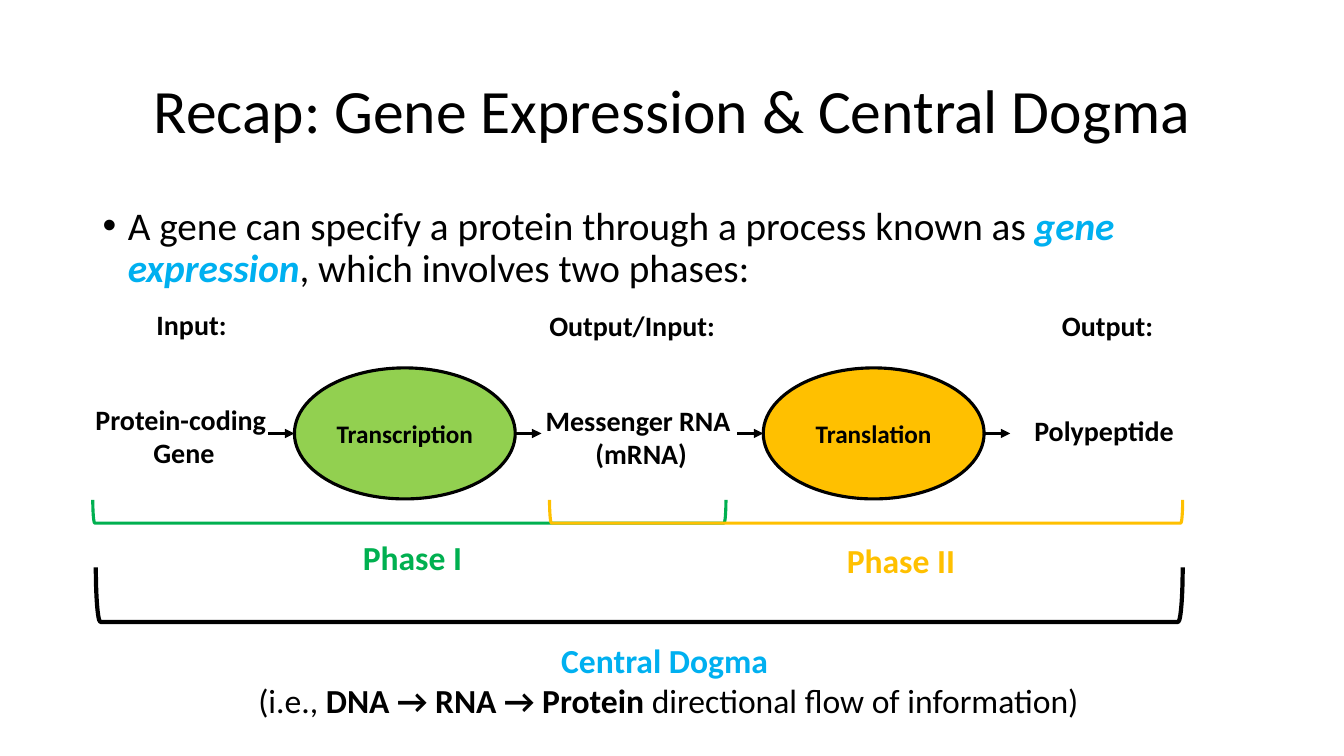
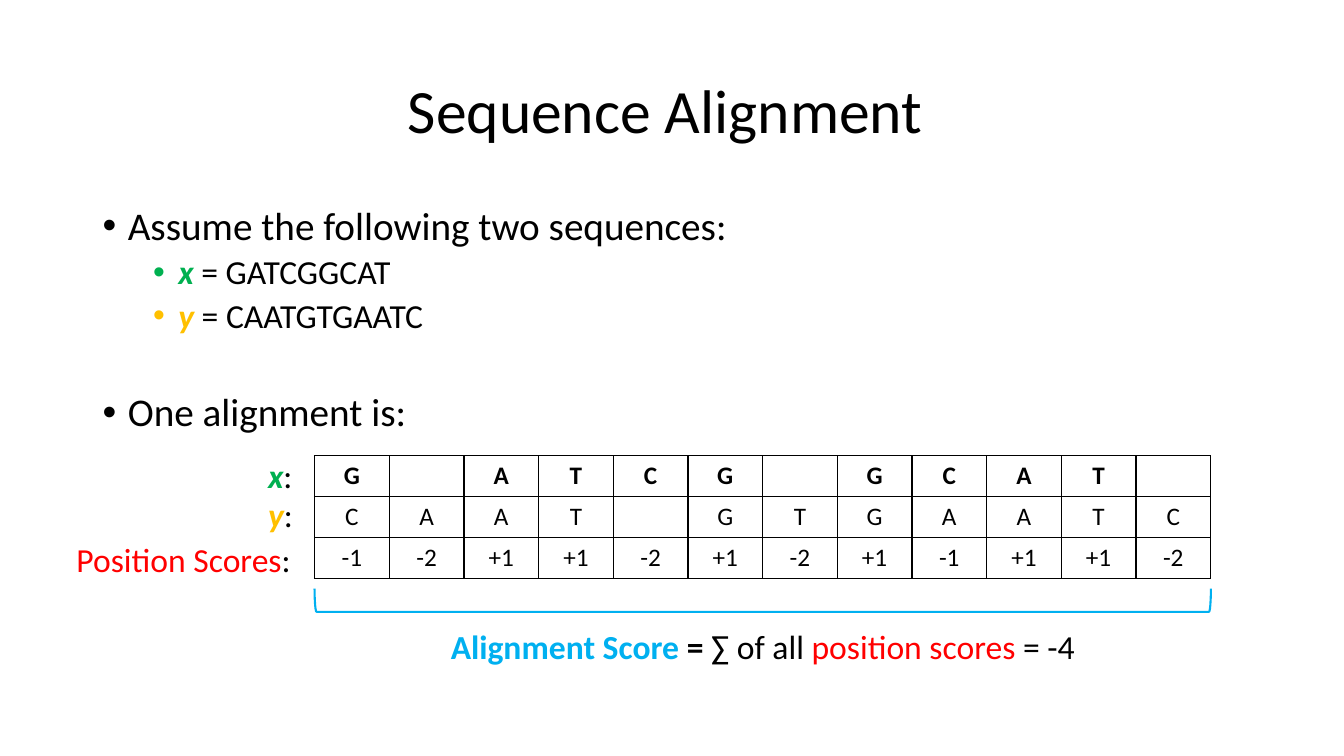
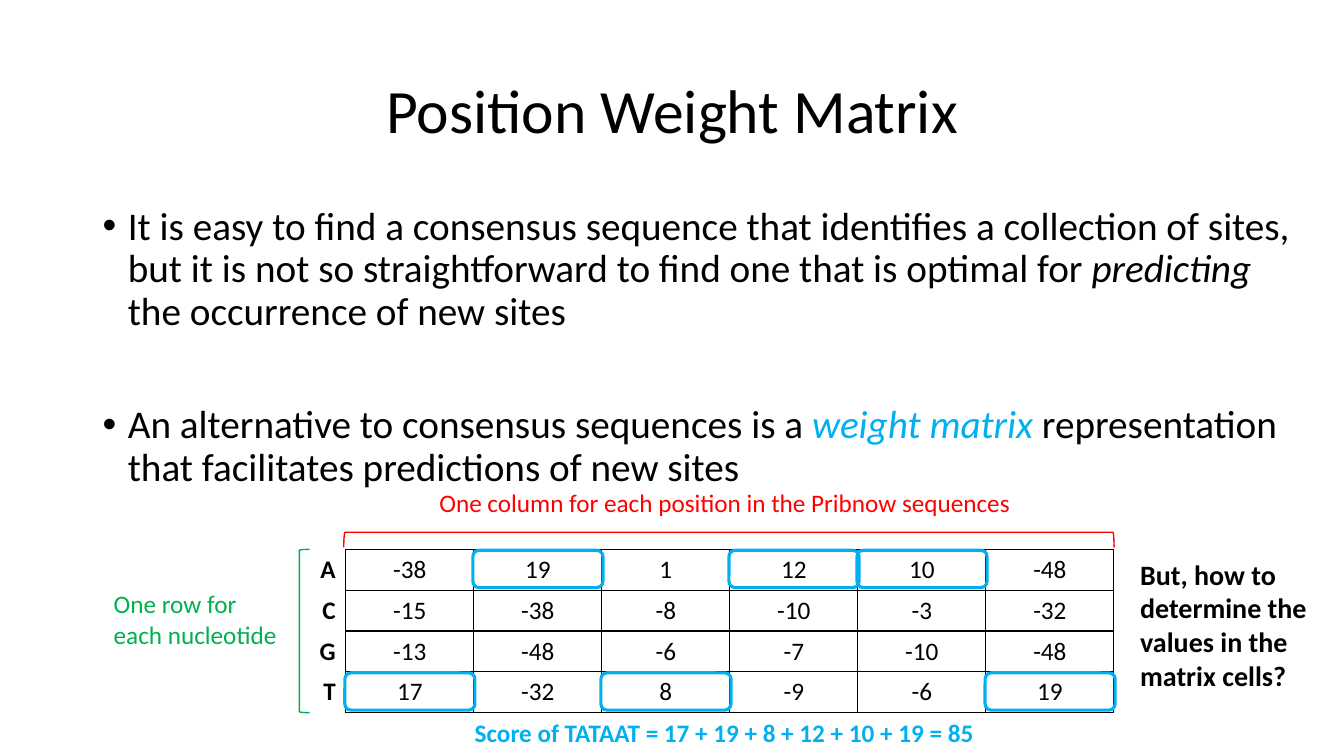
from lxml import etree
from pptx import Presentation
from pptx.dml.color import RGBColor
from pptx.enum.shapes import MSO_CONNECTOR as Link, MSO_SHAPE as Kind
from pptx.enum.text import MSO_ANCHOR as Anchor, MSO_AUTO_SIZE as Fit, PP_ALIGN as Align
from pptx.oxml.ns import qn
from pptx.util import Inches, Pt

# Theme: one place for colours, type sizes and shared frames
THEME = {
    "font": "Calibri",
    "ink": {"black": "000000", "sky": "00B0F0", "green": "00B050", "gold": "FFC000",
            "lime": "92D050", "red": "FF0000"},
    "size": {"title": 44, "body": 28, "sub": 24, "label": 20, "small": 18},
    "title": (0.92, 0.4, 11.5, 1.45),
    "body": (0.92, 2, 11.5, 4.76),
}
SIZE = THEME["size"]
SIDES = {"l": Align.LEFT, "c": Align.CENTER, "r": Align.RIGHT}

# Content. A run is (text, style): a colour name and "b" or "i" as needed.
# A bullet is (level, space before, runs).
RECAP = {
    "title": "Recap: Gene Expression & Central Dogma",
    "body": [(0, 10, [("A gene can specify a protein through a process known as ", ""),
                      ("gene expression", "sky b i"),
                      (", which involves two phases:", "")])],
    "steps": [("Transcription", "lime"), ("Translation", "gold")],
    "labels": [
        ((1.45, 3, 0.9, 0.44), ["Input:"]),
        ((5.34, 3.01, 1.86, 0.44), ["Output/Input:"]),
        ((10.43, 3.01, 1.11, 0.44), ["Output:"]),
        ((0.84, 3.94, 1.97, 0.77), ["Protein-coding ", "Gene"]),
        ((5.3, 3.95, 2.12, 0.77), ["Messenger RNA ", "(mRNA)"]),
        ((10.15, 4.05, 1.6, 0.44), ["Polypeptide"]),
    ],
    "phases": [
        ("Phase I", "green", (3.5, 5.28, 1.2, 0.5), (0.92, 4.96, 6.28, 0.23)),
        ("Phase II", "gold", (8.3, 5.31, 1.29, 0.5), (5.45, 4.96, 6.28, 0.23)),
    ],
    "dogma": [[("Central Dogma ", "sky b")],
              [("(i.e., ", ""), ("DNA → RNA → Protein ", "b"),
               ("directional flow of information)", "")]],
}
ALIGN = {
    "title": "Sequence Alignment ",
    "body": [(0, 10, [("Assume the following two sequences:", "")]),
             (1, 5, [("x", "green b i"), (" = GATCGGCAT", "")]),
             (1, 5, [("y", "gold b i"), (" = CAATGTGAATC", "")]),
             (0, 41, [("One alignment is:", "")])],
    "rows": ["G,,A,T,C,G,,G,C,A,T,", "C,A,A,T,,G,T,G,A,A,T,C",
             "-1,-2,+1,+1,-2,+1,-2,+1,-1,+1,+1,-2"],
    "heads": [("x", "green b i", (2.56, 4.46, 0.45, 0.5)),
              ("y", "gold b i", (2.56, 4.85, 0.45, 0.5)),
              ("Position Scores", "red", (0.66, 5.3, 2.35, 0.5))],
    "score": [("Alignment Score ", "sky b"), ("= ", "b"), ("∑ of all ", ""),
              ("position scores ", "red"), ("= -4", "")],
}
MATRIX = {
    "title": "Position Weight Matrix",
    "body": [(0, 10, [("It is easy to find a consensus sequence that identifies a collection "
                       "of sites, but it is not so straightforward to find one that is "
                       "optimal for ", ""),
                      ("predicting", "i"), (" the occurrence of new sites", "")]),
             (0, 51, [("An alternative to consensus sequences is a ", ""),
                      ("weight matrix", "sky i"),
                      (" representation that facilitates predictions of new sites", "")])],
    "rows": ["A,-38,19,1,12,10,-48", "C,-15,-38,-8,-10,-3,-32",
             "G,-13,-48,-6,-7,-10,-48", "T,17,-32,8,-9,-6,19"],
    "site": "TATAAT",
    "notes": [
        ("One column for each position in the Pribnow sequences", "red", "small",
         (4.26, 4.79, 5.94, 0.4)),
        ("One row for \neach nucleotide", "green", "small", (1.03, 5.79, 1.9, 0.71)),
        ("Score of TATAAT = 17 + 19 + 8 + 12 + 10 + 19 = 85", "sky b", "small",
         (4.61, 7.07, 5.23, 0.4)),
        ("But, how to \ndetermine the \nvalues in the \nmatrix cells?", "b", "label",
         (11.21, 5.48, 1.93, 1.45)),
    ],
}


# Helpers
def inch(box):
    return [Inches(v) for v in box]


def ink(name):
    return RGBColor.from_string(THEME["ink"][name])


def style(run, size, code=""):
    marks = code.split()
    font = run.font
    font.name, font.size = THEME["font"], Pt(SIZE[size])
    font.bold, font.italic = "b" in marks, "i" in marks
    font.color.rgb = ink(next((m for m in marks if m in THEME["ink"]), "black"))


def write(para, runs, size, side="l"):
    para.alignment = SIDES[side]
    for text, code in runs:
        for n, line in enumerate(text.split("\n")):
            if n:
                para.add_line_break()
            run = para.add_run()
            run.text = line
            style(run, size, code)


def label(slide, box, paras, size, side="l"):
    frame = slide.shapes.add_textbox(*inch(box)).text_frame
    frame.word_wrap, frame.auto_size = False, Fit.SHAPE_TO_FIT_TEXT
    for n, runs in enumerate(paras):
        write(frame.add_paragraph() if n else frame.paragraphs[0], runs, size, side)


def shape(slide, kind, box, line, width, fill=None):
    item = slide.shapes.add_shape(kind, *inch(box))
    item.shadow.inherit = False
    if fill:
        item.fill.solid()
        item.fill.fore_color.rgb = ink(fill)
    else:
        item.fill.background()
    item.line.color.rgb, item.line.width = ink(line), Pt(width)
    return item


def brace(slide, box, line, width, turn=90):
    """Bracket lying flat in box: turn 90 opens up, 270 opens down."""
    x, y, w, h = box
    flat = (x + (w - h) / 2, y + (h - w) / 2, h, w)
    shape(slide, Kind.RIGHT_BRACKET, flat, line, width).rotation = turn


def arrow(slide, x, y, length):
    link = slide.shapes.add_connector(Link.STRAIGHT, *inch((x, y, x + length, y)))
    link.line.color.rgb, link.line.width = ink("black"), Pt(2.25)
    etree.SubElement(link.line._get_or_add_ln(), qn("a:tailEnd"), type="triangle")
    etree.SubElement(link._element.spPr, qn("a:effectLst"))


def border(cell, sides):
    props = cell._tc.get_or_add_tcPr()
    for n, side in enumerate("LRTB"):
        edge = etree.Element(qn("a:ln" + side), w=str(Pt(1)))
        if side in sides:
            fill = etree.SubElement(edge, qn("a:solidFill"))
            etree.SubElement(fill, qn("a:srgbClr"), val=THEME["ink"]["black"])
        else:
            etree.SubElement(edge, qn("a:noFill"))
        props.insert(n, edge)


def grid(slide, box, rows, look):
    """look(row, column) gives the run style, alignment and bordered sides."""
    rows = [row.split(",") for row in rows]
    x, y, w, h = box
    table = slide.shapes.add_table(len(rows), len(rows[0]), *inch(box)).table
    table.first_row = table.horz_banding = False
    for col in table.columns:
        col.width = Inches(w / len(rows[0]))
    for r, row in enumerate(rows):
        table.rows[r].height = Inches(h / len(rows))
        for c, text in enumerate(row):
            cell = table.cell(r, c)
            code, side, sides = look(r, c)
            cell.fill.background()
            border(cell, sides)
            if text:
                write(cell.text_frame.paragraphs[0], [(text, code)], "small", side)


def start(deck, data, wide=THEME["body"][2]):
    slide = deck.slides.add_slide(deck.slide_layouts[5])
    # Title
    title = slide.shapes.title
    title.left, title.top, title.width, title.height = inch(THEME["title"])
    title.text_frame.text = data["title"]
    title.text_frame.vertical_anchor = Anchor.MIDDLE
    para = title.text_frame.paragraphs[0]
    para.alignment, para.line_spacing = Align.CENTER, 0.9
    style(para.runs[0], "title")
    # Bullets
    x, y, _, h = THEME["body"]
    frame = slide.shapes.add_textbox(*inch((x, y, wide, h))).text_frame
    frame.word_wrap = True
    for n, (level, gap, runs) in enumerate(data["body"]):
        para = frame.add_paragraph() if n else frame.paragraphs[0]
        para.level, para.line_spacing, para.space_before = level, 0.9, Pt(gap)
        write(para, runs, "sub" if level else "body")
        props = para._p.get_or_add_pPr()
        props.set("marL", str(Inches(0.25 + 0.5 * level)))
        props.set("indent", str(Inches(-0.25)))
        etree.SubElement(props, qn("a:buFont"), typeface="Arial")
        etree.SubElement(props, qn("a:buChar"), char="•")
    return slide


# Slides
def recap(deck):
    slide = start(deck, RECAP)
    left, top, wide, high, step, gap = 2.92, 3.65, 2.19, 1.3, 4.65, 0.26
    for n, (text, fill) in enumerate(RECAP["steps"]):
        x, mid = left + n * step, top + high / 2
        oval = shape(slide, Kind.OVAL, (x, top, wide, high), "black", 2.25, fill)
        frame = oval.text_frame
        frame.margin_left = frame.margin_right = Inches(0.04)
        frame.vertical_anchor = Anchor.MIDDLE
        write(frame.paragraphs[0], [(text, "b")], "small", "c")
        arrow(slide, x - gap, mid, gap)
        arrow(slide, x + wide, mid, gap)
    for box, lines in RECAP["labels"]:
        label(slide, box, [[(line, "b")] for line in lines], "label", "c")
    for text, tint, box, span in RECAP["phases"]:
        brace(slide, span, tint, 2.25)
        label(slide, box, [[(text, tint + " b")]], "sub")
    brace(slide, (0.95, 5.63, 10.78, 0.54), "black", 3)
    label(slide, (2.4, 6.3, 8.46, 0.91), RECAP["dogma"], "sub", "c")


def alignment(deck):
    slide = start(deck, ALIGN)
    x, y, w, h = box = (3.12, 4.52, 8.89, 1.22)
    grid(slide, box, ALIGN["rows"], lambda r, c: ("" if r else "b", "c", "LRTB"))
    for text, code, place in ALIGN["heads"]:
        label(slide, place, [[(text, code), (":", "")]], "sub")
    label(slide, (4.34, 6.16, 6.45, 0.5), [ALIGN["score"]], "sub", "c")
    brace(slide, (x, y + h + 0.1, w, 0.23), "sky", 1.5)


def matrix(deck):
    slide = start(deck, MATRIX, 11.98)
    x, y, w, h = box = (2.16, 5.45, 8.89, 1.62)
    rows = MATRIX["rows"]
    wide, high = w / 7, h / len(rows)
    grid(slide, box, rows, lambda r, c: ("", "c", "LRTB") if c else ("b", "r", "R"))
    for text, code, size, place in MATRIX["notes"]:
        label(slide, place, [[(text, code)]], size)
    brace(slide, (x + wide - 0.02, y - 0.17, 7.64, 0.15), "red", 1, 270)
    shape(slide, Kind.LEFT_BRACKET, (2.97, y, 0.1, h), "green", 1)
    # Ring the cell that each base of the site picks
    bases = [row[0] for row in rows]
    for n, base in enumerate(MATRIX["site"], 1):
        cell = (x + n * wide - 0.01, y + bases.index(base) * high + 0.01, 1.29, 0.37)
        shape(slide, Kind.ROUNDED_RECTANGLE, cell, "sky", 2.25)


def main():
    deck = Presentation()
    deck.slide_width, deck.slide_height = Inches(13.33), Inches(7.5)
    for build in (recap, alignment, matrix):
        build(deck)
    deck.save("out.pptx")


if __name__ == "__main__":
    main()
